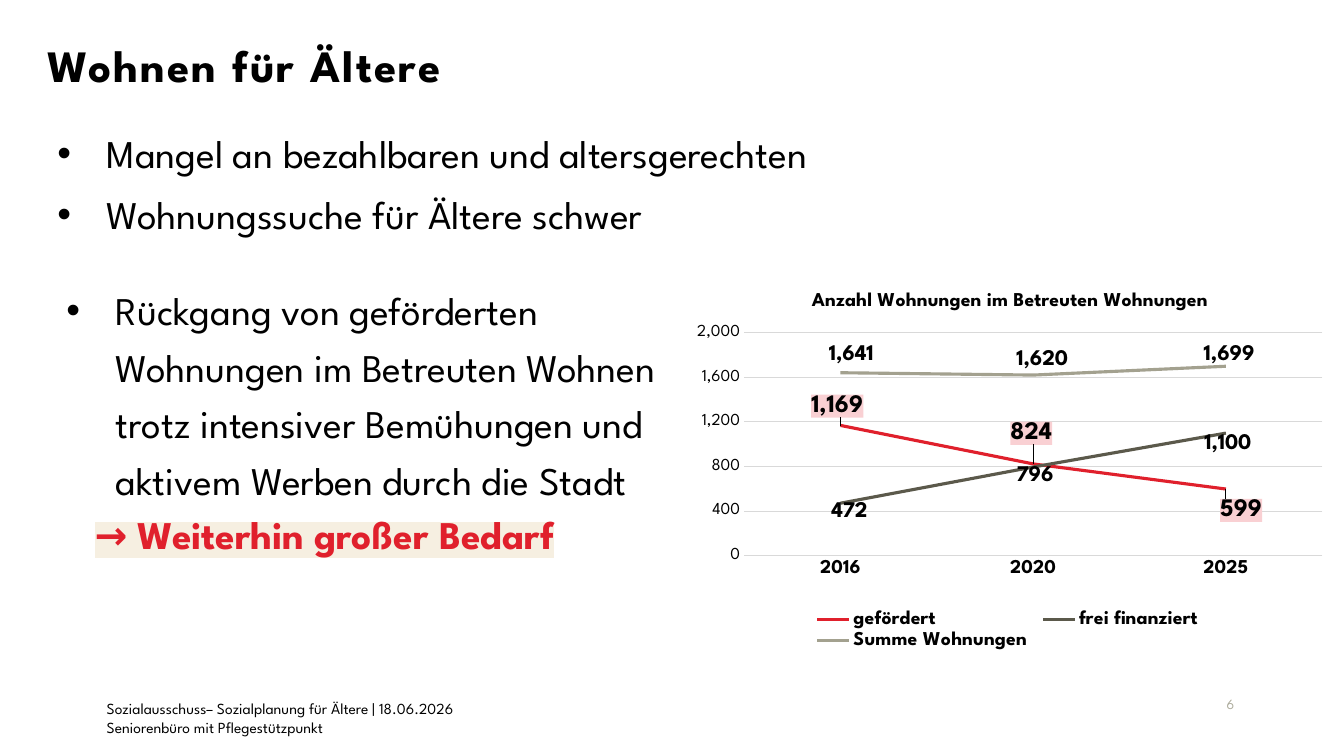
"""Build the slide "Wohnen für Ältere" with bullets and a line chart of assisted flats."""
from lxml.etree import SubElement
from pptx import Presentation
from pptx.chart.data import CategoryChartData
from pptx.dml.color import RGBColor
from pptx.enum.chart import XL_CHART_TYPE, XL_LEGEND_POSITION, XL_MARKER_STYLE
from pptx.enum.chart import XL_LABEL_POSITION as LabelPos, XL_TICK_MARK as Tick
from pptx.enum.text import MSO_ANCHOR as Anchor, PP_ALIGN as Align
from pptx.oxml.ns import qn
from pptx.util import Inches, Pt

FONT = "League Spartan"
BLACK = RGBColor(0x00, 0x00, 0x00)
RED = RGBColor(0xE0, 0x20, 0x2C)
OLIVE = RGBColor(0x5B, 0x59, 0x4B)
SAGE = RGBColor(0xA3, 0xA1, 0x8F)
PAGE_GREY = RGBColor(0xAC, 0xAB, 0x9B)
GRID_GREY = RGBColor(0xD9, 0xD9, 0xD9)
PINK = RGBColor(0xF9, 0xD0, 0xD3)
CREAM = RGBColor(0xF6, 0xEF, 0xE1)


def write(frame, text, size, color=BLACK, bold=False, align=Align.LEFT, first=False, before=0,
          spacing=1.0, margin=0, hanging=0, bullet=None, tracking=None, highlight=None):
    """Write one formatted paragraph into a text frame."""
    paragraph = frame.paragraphs[0] if first else frame.add_paragraph()
    paragraph.alignment = align
    paragraph.line_spacing = spacing
    paragraph.space_before = Pt(before)
    properties = paragraph._p.get_or_add_pPr()
    properties.set("marL", str(Inches(margin)))
    properties.set("indent", str(Inches(-hanging)))
    if bullet:
        SubElement(properties, qn("a:buFont"), typeface="Arial")
        SubElement(properties, qn("a:buChar"), char=bullet)
    run = paragraph.add_run()
    run.text = text
    font = run.font
    font.name, font.size, font.bold = FONT, Pt(size), bold
    font.color.rgb = color
    run_properties = run._r.get_or_add_rPr()
    if tracking:
        run_properties.set("spc", str(int(tracking * 100)))
    if highlight:
        mark = SubElement(run_properties, qn("a:highlight"))
        SubElement(mark, qn("a:srgbClr"), val=str(highlight))
        run_properties.find(qn("a:solidFill")).addnext(mark)


def place(element, index, **values):
    """Give a chart part a manual layout."""
    for old in element.findall(qn("c:layout")):
        element.remove(old)
    layout = SubElement(element, qn("c:layout"))
    manual = SubElement(layout, qn("c:manualLayout"))
    for key, value in values.items():
        SubElement(manual, qn("c:" + key), val=str(value))
    element.insert(index, layout)


prs = Presentation()
prs.slide_width, prs.slide_height = Inches(13.33), Inches(7.5)
slide = prs.slides.add_slide(prs.slide_layouts[6])

frames = {}
for part, left, top, width, height, anchor in [
    ("footer", 0.96, 6.89, 4.92, 0.48, Anchor.TOP),
    ("title", 0.37, 0.38, 11.34, 0.59, Anchor.MIDDLE),
    ("page", 9.34, 6.85, 3, 0.27, Anchor.MIDDLE),
    ("problems", 0.37, 1.23, 12.76, 2.52, Anchor.TOP),
    ("decline", 0.46, 2.7, 6.74, 5.2, Anchor.TOP),
]:
    box = slide.shapes.add_textbox(Inches(left), Inches(top), Inches(width), Inches(height))
    frames[part] = box.text_frame
    frames[part].word_wrap = True
    frames[part].vertical_anchor = anchor

bullet_format = {"size": 28, "margin": 0.59, "hanging": 0.49, "bullet": "•"}
write(frames["footer"], "Sozialausschuss– Sozialplanung für Ältere | 18.06.2026", 11, first=True)
write(frames["footer"], "Seniorenbüro mit Pflegestützpunkt", 11)
write(frames["title"], "Wohnen für Ältere", 32, bold=True, first=True, spacing=0.9, tracking=1.5)
write(frames["page"], "6", 10, color=PAGE_GREY, align=Align.RIGHT, first=True)
write(frames["problems"], "Mangel an bezahlbaren und altersgerechten", first=True, **bullet_format)
write(frames["problems"], "Wohnungssuche für Ältere schwer", before=10, **bullet_format)
write(frames["decline"], "Rückgang von geförderten Wohnungen im Betreuten Wohnen trotz intensiver "
      "Bemühungen und aktivem Werben durch die Stadt", first=True, spacing=1.2, **bullet_format)
write(frames["decline"], "→ Weiterhin großer Bedarf", 28, color=RED, bold=True, before=5,
      margin=0.38, highlight=CREAM)

ABOVE, BELOW = LabelPos.ABOVE, LabelPos.BELOW
housing = [
    ("gefördert", (1169, 824, 599), RED, 18, PINK,
     [(ABOVE, -0.005, -0.01), (ABOVE, -0.003, -0.04), (BELOW, 0.024, 0.015)]),
    ("frei finanziert", (472, 796, 1100), OLIVE, 16, None,
     [(BELOW, 0.014, -0.015), (BELOW, 0.003, -0.013), (BELOW, 0.003, -0.008)]),
    ("Summe Wohnungen", (1641, 1620, 1699), SAGE, 16, None,
     [(ABOVE, 0.017, -0.008), (ABOVE, 0.014, 0), (ABOVE, 0.005, 0.008)]),
]
data = CategoryChartData(number_format="#,##0")
data.categories = ["2016", "2020", "2025"]
for name, values, *_ in housing:
    data.add_series(name, values)
chart = slide.shapes.add_chart(XL_CHART_TYPE.LINE, Inches(6.82), Inches(2.7), Inches(6.3),
                               Inches(3.78), data).chart
chart.font.name, chart.font.size = FONT, Pt(10)
chart.font.color.rgb = BLACK
chart.has_title = True
write(chart.chart_title.text_frame, "Anzahl Wohnungen im Betreuten Wohnungen", 14, bold=True,
      align=Align.CENTER, first=True)
chart.chart_title.include_in_layout = False
place(chart.chart_title._element, 1, xMode="edge", yMode="edge", x=0.19, y=0.04)
place(chart._chartSpace.chart.plotArea, 0, layoutTarget="inner", xMode="edge", yMode="edge",
      x=0.089, y=0.159, w=0.911, h=0.586)

chart.has_legend = True
legend = chart.legend
legend.position = XL_LEGEND_POSITION.BOTTOM
legend.include_in_layout = False
place(legend._element, 1, xMode="edge", yMode="edge", x=0.19, y=0.88, w=0.63, h=0.12)

years, counts = chart.category_axis, chart.value_axis
counts.minimum_scale, counts.maximum_scale, counts.major_unit = 0, 2000, 400
counts.tick_labels.number_format = "#,##0"
counts.tick_labels.number_format_is_linked = False
counts.format.line.fill.background()
for line in (counts.major_gridlines.format.line, years.format.line):
    line.color.rgb, line.width = GRID_GREY, Pt(0.75)
for axis in (years, counts):
    axis.major_tick_mark = axis.minor_tick_mark = Tick.NONE
for font, size, bold in [(years.tick_labels.font, 14, True), (counts.tick_labels.font, 12, False),
                         (legend.font, 14, True)]:
    font.name, font.size, font.bold = FONT, Pt(size), bold
    font.color.rgb = BLACK

for series, (_, _, color, size, fill, labels) in zip(chart.plots[0].series, housing):
    series.smooth = False
    series.marker.style = XL_MARKER_STYLE.NONE
    series.format.line.color.rgb, series.format.line.width = color, Pt(2.25)
    for index, (position, dx, dy) in enumerate(labels):
        label = series.points[index].data_label
        label.position = position
        label.font.name, label.font.size, label.font.bold = FONT, Pt(size), True
        label.font.color.rgb = BLACK
        element = series._element.findall(".//" + qn("c:dLbl"))[index]
        if fill:
            for old in element.findall(qn("c:spPr")):
                element.remove(old)
            background = SubElement(element, qn("c:spPr"))
            solid = SubElement(background, qn("a:solidFill"))
            SubElement(solid, qn("a:srgbClr"), val=str(fill))
            element.find(qn("c:txPr")).addprevious(background)
        place(element, 1, x=dx, y=dy)

prs.save("out.pptx")
